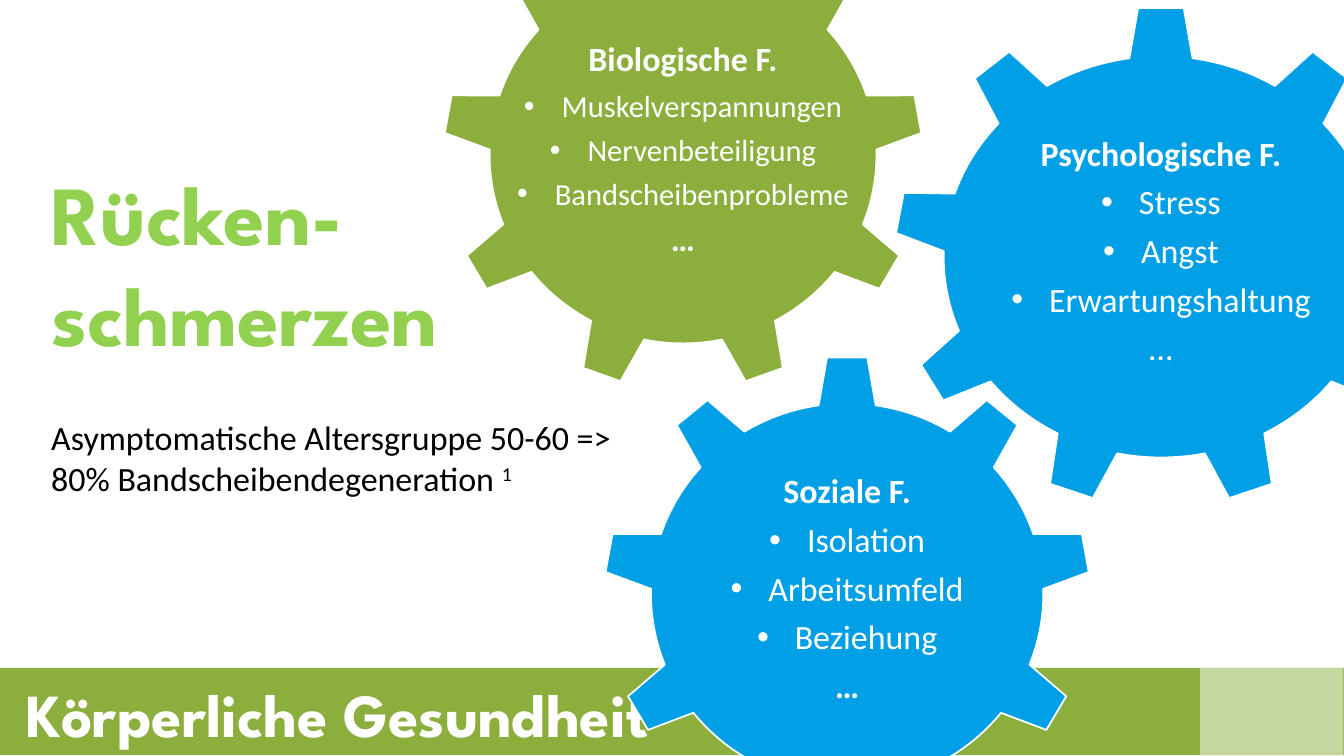
"""Build the slide on back pain and its three interlocking groups of factors."""
import dataclasses

import pptx
import pptx.dml.color
import pptx.enum.shapes
import pptx.enum.text
import pptx.oxml.ns
import pptx.util
from lxml import etree

Cm = pptx.util.Cm
Align = pptx.enum.text.PP_ALIGN
Anchor = pptx.enum.text.MSO_ANCHOR
Shape = pptx.enum.shapes.MSO_SHAPE


@dataclasses.dataclass(frozen=True)
class Theme:
    """Colours, fonts and type sizes of the slide."""
    green: str = "8BAE3D"
    blue: str = "019FE5"
    lime: str = "92D050"
    white: str = "FFFFFF"
    black: str = "000000"
    display: str = "League Spartan"
    text: str = "Calibri"
    title_size: float = 98.9
    band_size: float = 72
    body_size: float = 40
    small_size: float = 36


THEME = Theme()
GEARS = [
    ((25.07, 14.78, 20.27, 19.84), THEME.blue, "Soziale F.",
     ["Isolation", "Arbeitsumfeld", "Beziehung"], THEME.body_size, True),
    ((37.13, 0.25, 22.23, 20.85), THEME.blue, "Psychologische F.",
     ["Stress", "Angst", "Erwartungshaltung"], THEME.body_size, False),
    ((18.39, -3.35, 19.99, 19.58), THEME.green, "Biologische F.",
     ["Muskelverspannungen", "Nervenbeteiligung", "Bandscheibenprobleme"],
     THEME.small_size, True),
]


def rgb(code):
    """Turn a hex code into a colour."""
    return pptx.dml.color.RGBColor.from_string(code)


def style(para, font, size, color, bold=False):
    """Format every run of a paragraph."""
    for span in para.runs:
        span.font.name = font
        span.font.size = pptx.util.Pt(size)
        span.font.bold = bold
        span.font.color.rgb = rgb(color)


def set_frame(frame, wrap, anchor, inset=None):
    """Set wrapping, anchoring and, if given, equal insets of a text frame."""
    frame.word_wrap = wrap
    frame.auto_size = pptx.enum.text.MSO_AUTO_SIZE.NONE
    frame.vertical_anchor = anchor
    if inset is not None:
        frame.margin_left = frame.margin_right = Cm(inset)
        frame.margin_top = frame.margin_bottom = Cm(inset)


def add_filled(page, kind, area, color, alpha=None):
    """Add a preset shape with a plain fill and no line."""
    shape = page.shapes.add_shape(kind, *map(Cm, area))
    shape.shadow.inherit = False
    shape.fill.solid()
    shape.fill.fore_color.rgb = rgb(color)
    shape.line.fill.background()
    if alpha is not None:
        tint = shape.fill._xPr.find(".//" + pptx.oxml.ns.qn("a:srgbClr"))
        etree.SubElement(tint, pptx.oxml.ns.qn("a:alpha")).set("val", str(alpha * 1000))
    return shape


def add_bullet(para):
    """Give a paragraph a round bullet with a hanging indent."""
    properties = para._p.get_or_add_pPr()
    properties.set("marL", str(Cm(1.57)))
    properties.set("indent", str(Cm(-1.57)))
    etree.SubElement(properties, pptx.oxml.ns.qn("a:buFont")).set("typeface", "Arial")
    etree.SubElement(properties, pptx.oxml.ns.qn("a:buChar")).set("char", "•")


def add_gear(page, area, color, heading, factors, factor_size, bold_end):
    """Add a gear with a heading, bulleted factors and a closing ellipsis."""
    gear = add_filled(page, Shape.GEAR_9, area, color)
    gear.line.color.rgb = rgb(THEME.white)
    gear.line.width = pptx.util.Pt(2)
    frame = gear.text_frame
    set_frame(frame, False, Anchor.MIDDLE, 0)
    rows = [(heading, THEME.body_size, True, False)]
    rows += [(factor, factor_size, False, True) for factor in factors]
    rows.append(("…", THEME.body_size, bold_end, False))
    for index, (wording, size, bold, bulleted) in enumerate(rows):
        para = frame.add_paragraph() if index else frame.paragraphs[0]
        para.text = wording
        para.alignment = Align.CENTER
        para.line_spacing = 0.9
        para.space_after = pptx.util.Pt(0.35 * size)
        if bulleted:
            add_bullet(para)
        style(para, THEME.text, size, THEME.white, bold)


def add_band(page):
    """Add the footer band with its light end and its topic."""
    add_filled(page, Shape.RECTANGLE, (0, 27.76, 55.85, 3.63), THEME.green)
    add_filled(page, Shape.RECTANGLE, (49.86, 27.76, 5.97, 3.63), THEME.white, 50)
    box = page.shapes.add_textbox(Cm(1.09), Cm(28.12), Cm(47.65), Cm(3.07))
    set_frame(box.text_frame, True, Anchor.TOP, 0)
    box.text_frame.text = "Körperliche Gesundheit"
    style(box.text_frame.paragraphs[0], THEME.display, THEME.band_size, THEME.white, True)


def set_title(page):
    """Place and format the title."""
    title = page.shapes.title
    title.left, title.top, title.width, title.height = map(Cm, (1.88, 4.27, 41.88, 10.95))
    set_frame(title.text_frame, True, Anchor.BOTTOM)
    title.text_frame.text = "Rücken-\vschmerzen"
    para = title.text_frame.paragraphs[0]
    para.alignment = Align.LEFT
    style(para, THEME.display, THEME.title_size, THEME.lime, True)


def add_finding(page):
    """Add the finding with its superscript reference."""
    box = page.shapes.add_textbox(Cm(1.88), Cm(17.2), Cm(24.33), Cm(3.68))
    frame = box.text_frame
    set_frame(frame, False, Anchor.TOP)
    frame.text = "Asymptomatische Altersgruppe 50-60 =>\n80% Bandscheibendegeneration "
    reference = frame.paragraphs[1].add_run()
    reference.text = "1"
    reference._r.get_or_add_rPr().set("baseline", "30000")
    for para in frame.paragraphs:
        style(para, THEME.text, THEME.body_size, THEME.black)


def main():
    """Build and save the deck."""
    deck = pptx.Presentation()
    deck.slide_width, deck.slide_height = Cm(55.85), Cm(31.42)
    page = deck.slides.add_slide(deck.slide_layouts.get_by_name("Title Only"))
    add_band(page)
    for gear in GEARS:
        add_gear(page, *gear)
    set_title(page)
    add_finding(page)
    deck.save("out.pptx")


if __name__ == "__main__":
    main()
